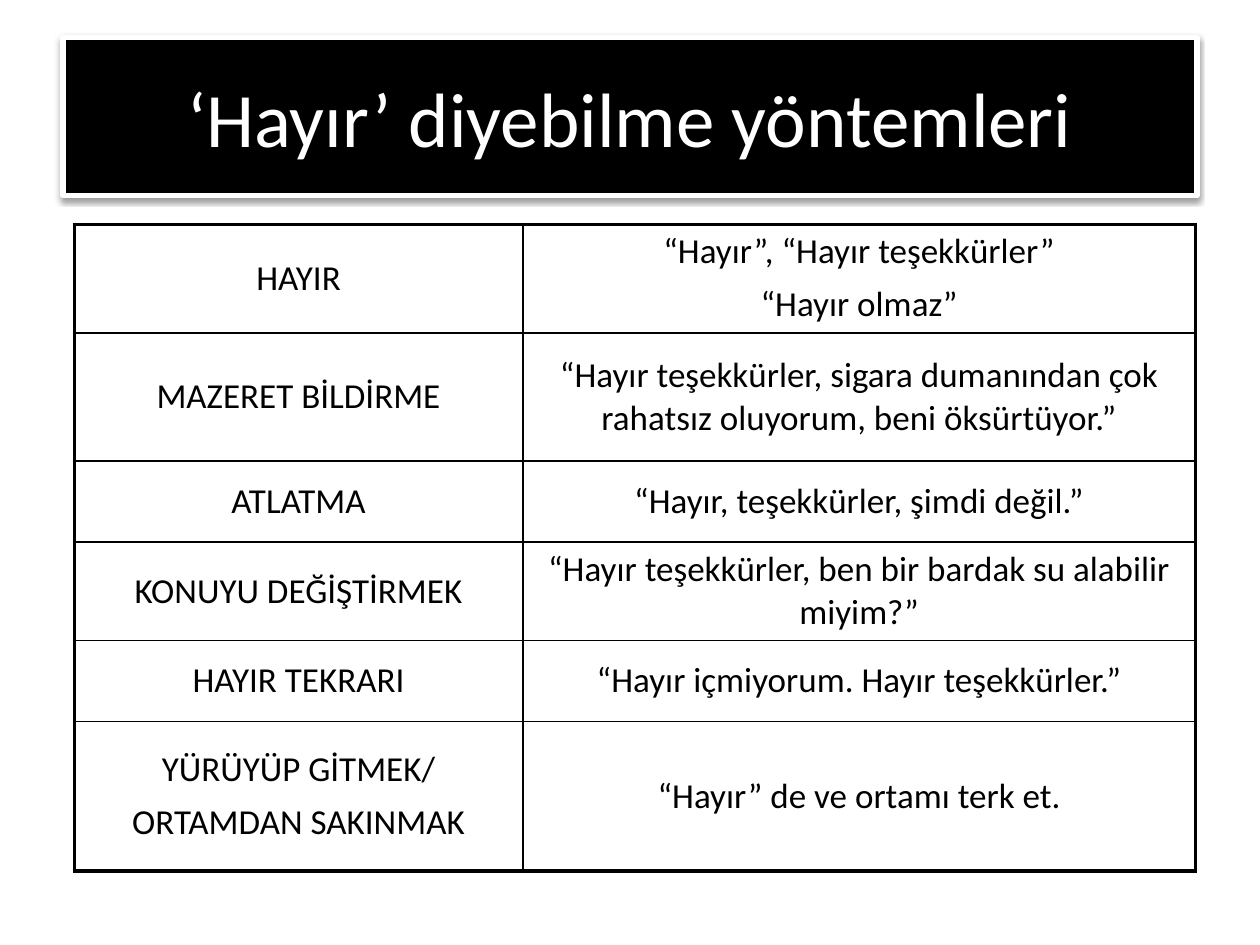
from typing import NamedTuple

from lxml import etree
from pptx import Presentation
from pptx import util as u
from pptx.dml import color
from pptx.enum import shapes, text
from pptx.oxml import ns

FONT = "Calibri"
BLACK, WHITE = "000000", "FFFFFF"
THIN, THICK = 1, 2.25
COLUMN_WIDTHS = (9.04, 13.56)


class Method(NamedTuple):
    """One way of saying no, with its example and row height in cm."""
    name: str
    example: str
    height: float


METHODS = [
    Method("HAYIR", "“Hayır”, “Hayır teşekkürler”\n“Hayır olmaz”", 2.16),
    Method("MAZERET BİLDİRME",
           "“Hayır teşekkürler, sigara dumanından çok rahatsız oluyorum, beni öksürtüyor.”", 2.59),
    Method("ATLATMA", "“Hayır, teşekkürler, şimdi değil.”", 1.63),
    Method("KONUYU DEĞİŞTİRMEK", "“Hayır teşekkürler, ben bir bardak su alabilir miyim?”", 1.98),
    Method("HAYIR TEKRARI", "“Hayır içmiyorum. Hayır teşekkürler.”", 1.63),
    Method("YÜRÜYÜP GİTMEK/\nORTAMDAN SAKINMAK", "“Hayır” de ve ortamı terk et.", 3.02),
]


def rgb(value: str) -> color.RGBColor:
    return color.RGBColor.from_string(value)


def add_child(parent, tag: str, **attributes):
    child = etree.SubElement(parent, ns.qn(tag))
    for key, value in attributes.items():
        child.set(key, str(value))
    return child


def format_text(frame, size: float, hex_color: str, space_before: float = 0) -> None:
    for paragraph in frame.paragraphs:
        paragraph.alignment = text.PP_ALIGN.CENTER
        paragraph.space_before = u.Pt(space_before)
        for run in paragraph.runs:
            run.font.name = FONT
            run.font.size = u.Pt(size)
            run.font.color.rgb = rgb(hex_color)


def draw_heading(slide, wording: str) -> None:
    banner = slide.shapes.add_shape(
        shapes.MSO_SHAPE.RECTANGLE, u.Cm(1.27), u.Cm(0.76), u.Cm(22.86), u.Cm(3.18))
    banner.fill.solid()
    banner.fill.fore_color.rgb = rgb(BLACK)
    banner.line.color.rgb = rgb(WHITE)
    banner.line.width = u.Pt(3)
    banner.shadow.inherit = False
    effects = banner.fill._xPr.find(ns.qn("a:effectLst"))
    shadow = add_child(effects, "a:outerShdw", blurRad=u.Pt(3.1), dist=u.Pt(1.6),
                       dir=90 * 60000, rotWithShape=0)
    add_child(add_child(shadow, "a:srgbClr", val=BLACK), "a:alpha", val=38000)
    banner.text_frame.text = wording
    banner.text_frame.word_wrap = True
    banner.text_frame.vertical_anchor = text.MSO_ANCHOR.MIDDLE
    format_text(banner.text_frame, 44, WHITE)


def draw_borders(cell, outer_sides: dict[str, bool]) -> None:
    properties = cell._tc.get_or_add_tcPr()
    for side, outer in outer_sides.items():
        line = add_child(properties, f"a:ln{side}", w=u.Pt(THICK if outer else THIN))
        add_child(add_child(line, "a:solidFill"), "a:srgbClr", val=BLACK)


def draw_methods(slide, methods: list[Method]) -> None:
    table = slide.shapes.add_table(
        len(methods), len(COLUMN_WIDTHS), u.Cm(1.5), u.Cm(4.52),
        u.Cm(sum(COLUMN_WIDTHS)), u.Cm(sum(m.height for m in methods))).table
    table.first_row = table.horz_banding = False
    for column, width in zip(table.columns, COLUMN_WIDTHS):
        column.width = u.Cm(width)
    for index, method in enumerate(methods):
        table.rows[index].height = u.Cm(method.height)
        for position, wording in enumerate((method.name, method.example)):
            cell = table.cell(index, position)
            cell.text_frame.text = wording
            cell.vertical_anchor = text.MSO_ANCHOR.MIDDLE
            format_text(cell.text_frame, 20, BLACK, 5.8)
            draw_borders(cell, {"L": position == 0, "R": position == 1,
                                "T": index == 0, "B": index == len(methods) - 1})
            cell.fill.background()


def main() -> None:
    """Build the slide on ways of saying no."""
    deck = Presentation()
    deck.slide_width, deck.slide_height = u.Cm(25.4), u.Cm(19.05)
    slide = deck.slides.add_slide(deck.slide_layouts[6])
    draw_heading(slide, "‘Hayır’ diyebilme yöntemleri")
    draw_methods(slide, METHODS)
    deck.save("out.pptx")


if __name__ == "__main__":
    main()
